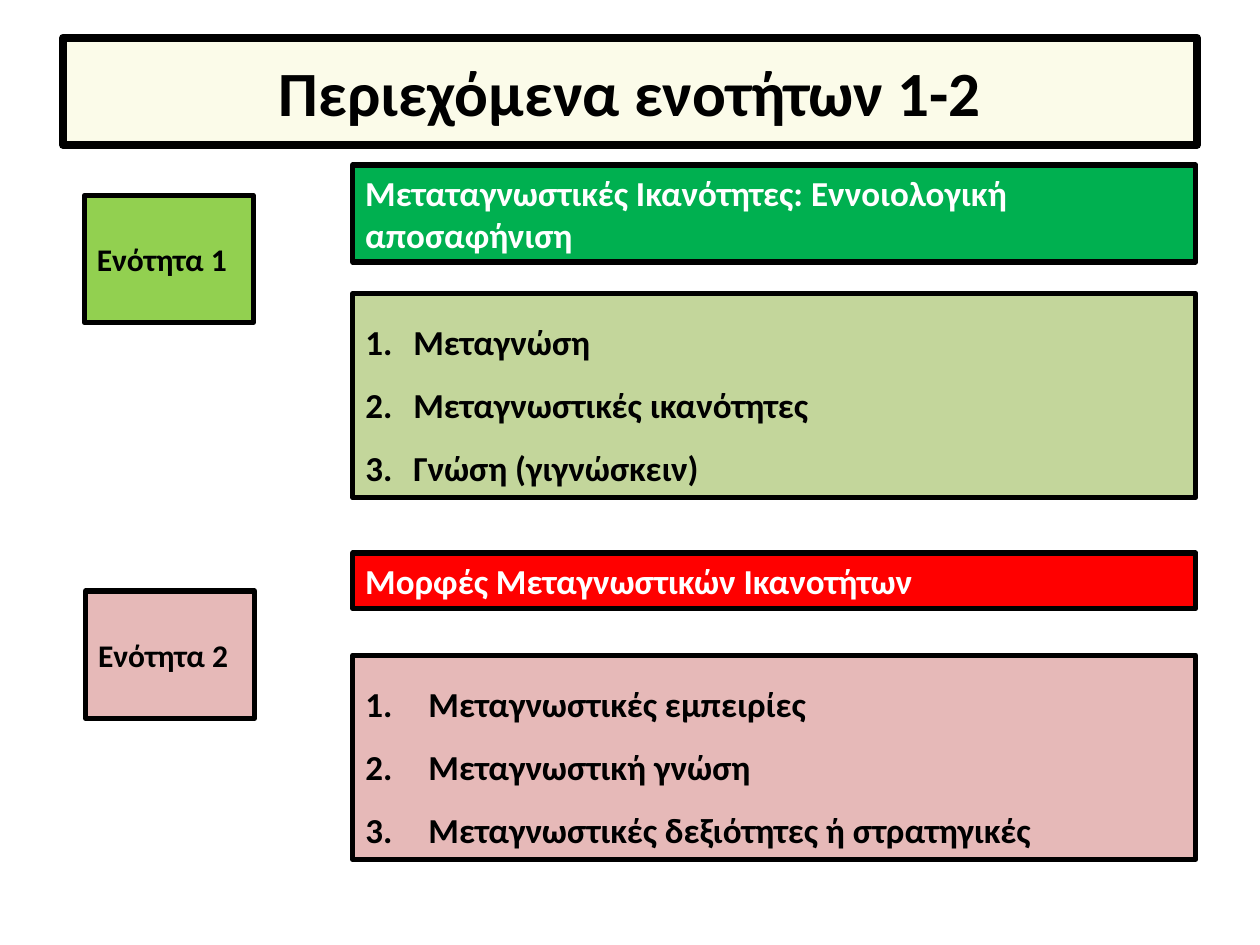
from lxml.etree import SubElement
from pptx import Presentation
from pptx.dml.color import RGBColor as Rgb
from pptx.enum.text import MSO_ANCHOR as Anchor, MSO_AUTO_SIZE as AutoSize, PP_ALIGN as Align
from pptx.oxml.ns import qn
from pptx.util import Inches, Pt

COLORS = {
    "black": "000000", "white": "FFFFFF", "cream": "FBFBE9",
    "lime": "92D050", "green": "00B050", "sage": "C3D69B",
    "red": "FF0000", "rose": "E6B9B8",
}
CONTENT_LEFT, CONTENT_WIDTH = 2.8, 6.69
LABEL_WIDTH, LABEL_HEIGHT = 1.34, 1.01
LIST_HEIGHT = 1.62

UNITS = [
    {
        "label": ("Ενότητα 1", 0.67, 1.55, "lime"),
        "heading": ("Μεταταγνωστικές Ικανότητες: Εννοιολογική αποσαφήνιση", 1.31, 0.77, "green"),
        "topics": ["Μεταγνώση", "Μεταγνωστικές ικανότητες", "Γνώση (γιγνώσκειν)"],
        "list": (2.33, 0.38, "sage"),
    },
    {
        "label": ("Ενότητα 2", 0.68, 4.69, "rose"),
        "heading": ("Μορφές Μεταγνωστικών Ικανοτήτων", 4.39, 0.44, "red"),
        "topics": ["Μεταγνωστικές εμπειρίες", "Μεταγνωστική γνώση",
                   "Μεταγνωστικές δεξιότητες ή στρατηγικές"],
        "list": (5.2, 0.5, "rose"),
    },
]


class UnitSlide:
    font_name = "Calibri"

    def __init__(self, slide):
        self.slide = slide

    def frame(self, box, fill, border=3, anchor=Anchor.TOP):
        box.fill.solid()
        box.fill.fore_color.rgb = Rgb.from_string(COLORS[fill])
        box.line.color.rgb = Rgb.from_string(COLORS["black"])
        box.line.width = Pt(border)
        text_frame = box.text_frame
        text_frame.word_wrap = True
        text_frame.auto_size = AutoSize.NONE
        text_frame.vertical_anchor = anchor
        return text_frame

    def place(self, box, left, top, width, height):
        box.left, box.top = Inches(left), Inches(top)
        box.width, box.height = Inches(width), Inches(height)

    def add_text(self, paragraph, text, size, color="black"):
        run = paragraph.add_run()
        run.text = text
        run.font.name = self.font_name
        run.font.size = Pt(size)
        run.font.bold = True
        run.font.color.rgb = Rgb.from_string(COLORS[color])

    def title(self, text):
        box = self.slide.shapes.title
        self.place(box, 0.5, 0.3, 9, 0.85)
        paragraph = self.frame(box, "cream", 4.5, Anchor.MIDDLE).paragraphs[0]
        paragraph.alignment = Align.CENTER
        self.add_text(paragraph, text, 36)

    def text_box(self, text, bounds, fill, size, color, anchor):
        box = self.slide.shapes.add_textbox(*map(Inches, bounds))
        self.add_text(self.frame(box, fill, anchor=anchor).paragraphs[0], text, size, color)

    def label(self, text, left, top, fill):
        bounds = (left, top, LABEL_WIDTH, LABEL_HEIGHT)
        self.text_box(text, bounds, fill, 18, "black", Anchor.MIDDLE)

    def heading(self, text, top, height, fill):
        bounds = (CONTENT_LEFT, top, CONTENT_WIDTH, height)
        self.text_box(text, bounds, fill, 20, "white", Anchor.TOP)

    def numbered_list(self, box, topics, top, indent, fill):
        self.place(box, CONTENT_LEFT, top, CONTENT_WIDTH, LIST_HEIGHT)
        text_frame = self.frame(box, fill)
        for index, topic in enumerate(topics):
            paragraph = text_frame.add_paragraph() if index else text_frame.paragraphs[0]
            paragraph.line_spacing = 1.5
            paragraph.space_before = Pt(0)
            properties = paragraph._p.get_or_add_pPr()
            properties.set("marL", str(Inches(indent)))
            properties.set("indent", str(-Inches(indent)))
            SubElement(properties, qn("a:buFont"), typeface="+mj-lt")
            SubElement(properties, qn("a:buAutoNum"), type="arabicPeriod")
            self.add_text(paragraph, topic, 20)


def main():
    deck = Presentation()
    deck.slide_width, deck.slide_height = Inches(10), Inches(7.5)
    slide = deck.slides.add_slide(deck.slide_layouts[3])
    contents = UnitSlide(slide)
    contents.title("Περιεχόμενα ενοτήτων 1-2")
    for list_index, unit in enumerate(UNITS, start=1):
        contents.label(*unit["label"])
        contents.heading(*unit["heading"])
        contents.numbered_list(slide.placeholders[list_index], unit["topics"], *unit["list"])
    deck.save("out.pptx")


if __name__ == "__main__":
    main()
